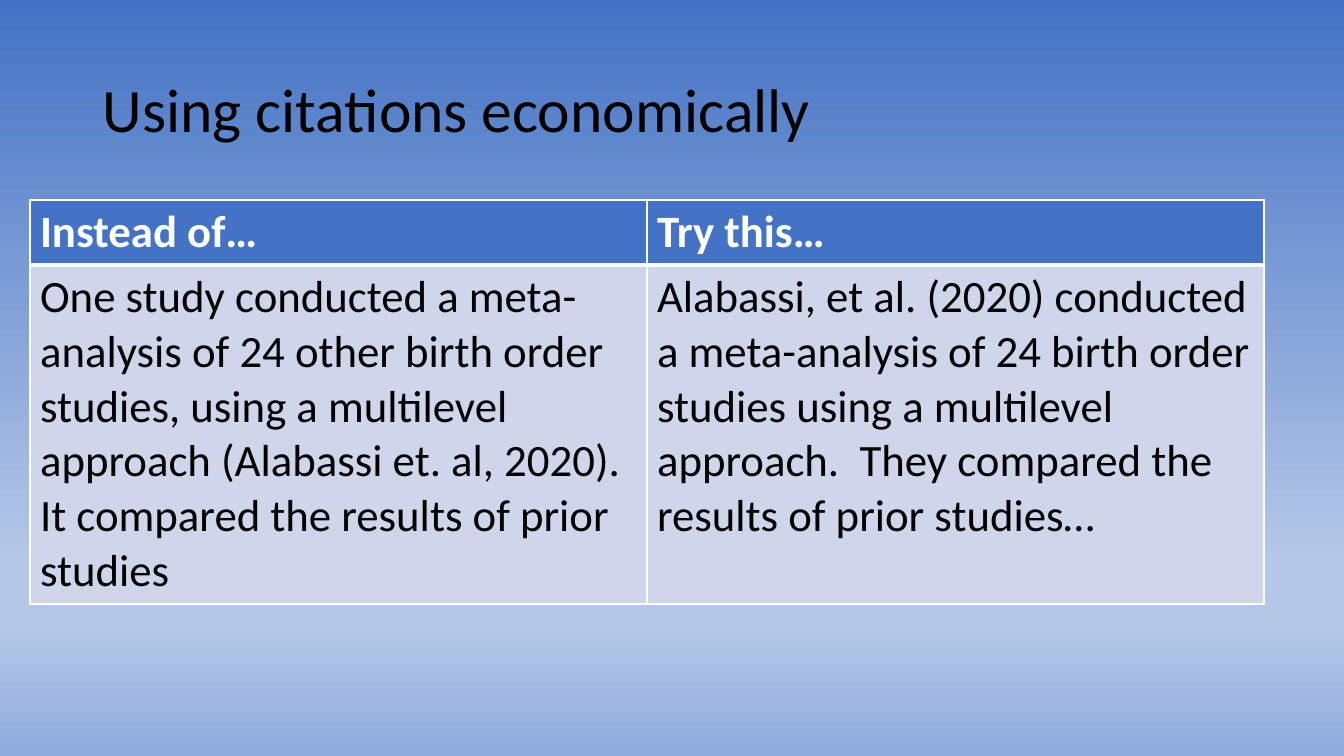
from lxml.etree import SubElement
from pptx import Presentation
from pptx.dml.color import RGBColor
from pptx.enum.text import MSO_ANCHOR
from pptx.oxml.ns import qn
from pptx.util import Emu, Pt

FONT = "Calibri"
BLUE, PALE, WHITE, BLACK = "4472C4", "CFD5EA", "FFFFFF", "000000"
BACKGROUND = [(0, BLUE), (74, "B4C7E7"), (83, "B4C7E7"), (100, "8FAADC")]
ROWS = [
    ("Instead of…", "Try this…"),
    ("One study conducted a meta-analysis of 24 other birth order studies, "
     "using a multilevel approach (Alabassi et. al, 2020). "
     "It compared the results of prior studies",
     "Alabassi, et al. (2020) conducted a meta-analysis of 24 birth order "
     "studies using a multilevel approach.  They compared the results of "
     "prior studies…"),
]


def px(n):
    return Emu(round(n * 914400 / 100.8))


def rgb(color):
    return RGBColor.from_string(color)


def add_run(p, text, size, color, bold=False):
    r = p.add_run()
    r.text = text
    r.font.name = FONT
    r.font.size = Pt(size)
    r.font.bold = bold
    r.font.color.rgb = rgb(color)


def set_background(s, stops):
    fill = s.background.fill
    fill.gradient()
    fill.gradient_angle = 270
    gs_list = next(s.element.iter(qn("a:gsLst")))
    for gs in list(gs_list):
        gs_list.remove(gs)
    for pos, color in stops:
        gs = SubElement(gs_list, qn("a:gs"), pos=str(pos * 1000))
        SubElement(gs, qn("a:srgbClr"), val=color)


def add_title(s, text):
    tf = s.shapes.add_textbox(px(93), px(40), px(1159), px(146)).text_frame
    tf.word_wrap = True
    tf.vertical_anchor = MSO_ANCHOR.MIDDLE
    p = tf.paragraphs[0]
    p.line_spacing = 0.9
    add_run(p, text, 44, BLACK)


def set_borders(cell, widths):
    props = cell._tc.get_or_add_tcPr()
    for i, (side, width) in enumerate(widths.items()):
        ln = props.makeelement(qn(f"a:ln{side}"), {"w": str(Pt(width))})
        fill = SubElement(ln, qn("a:solidFill"))
        SubElement(fill, qn("a:srgbClr"), val=WHITE)
        props.insert(i, ln)


def add_comparison(s, rows):
    col_width, heights = 617, (65, 339)
    table = s.shapes.add_table(len(rows), 2, px(30), px(200),
                               px(2 * col_width), px(sum(heights))).table
    for col in table.columns:
        col.width = px(col_width)
    for i, texts in enumerate(rows):
        header = i == 0
        table.rows[i].height = px(heights[i])
        for j, text in enumerate(texts):
            cell = table.cell(i, j)
            cell.fill.solid()
            cell.fill.fore_color.rgb = rgb(BLUE if header else PALE)
            # The rule under the header is heavier than the rest
            set_borders(cell, {"L": 1, "R": 1, "T": 1 if header else 3,
                               "B": 3 if header else 1})
            add_run(cell.text_frame.paragraphs[0], text, 32,
                    WHITE if header else BLACK, header)


def main():
    prs = Presentation()
    prs.slide_width, prs.slide_height = px(1344), px(756)
    s = prs.slides.add_slide(prs.slide_layouts[6])
    set_background(s, BACKGROUND)
    add_title(s, "Using citations economically")
    add_comparison(s, ROWS)
    prs.save("out.pptx")


if __name__ == "__main__":
    main()
